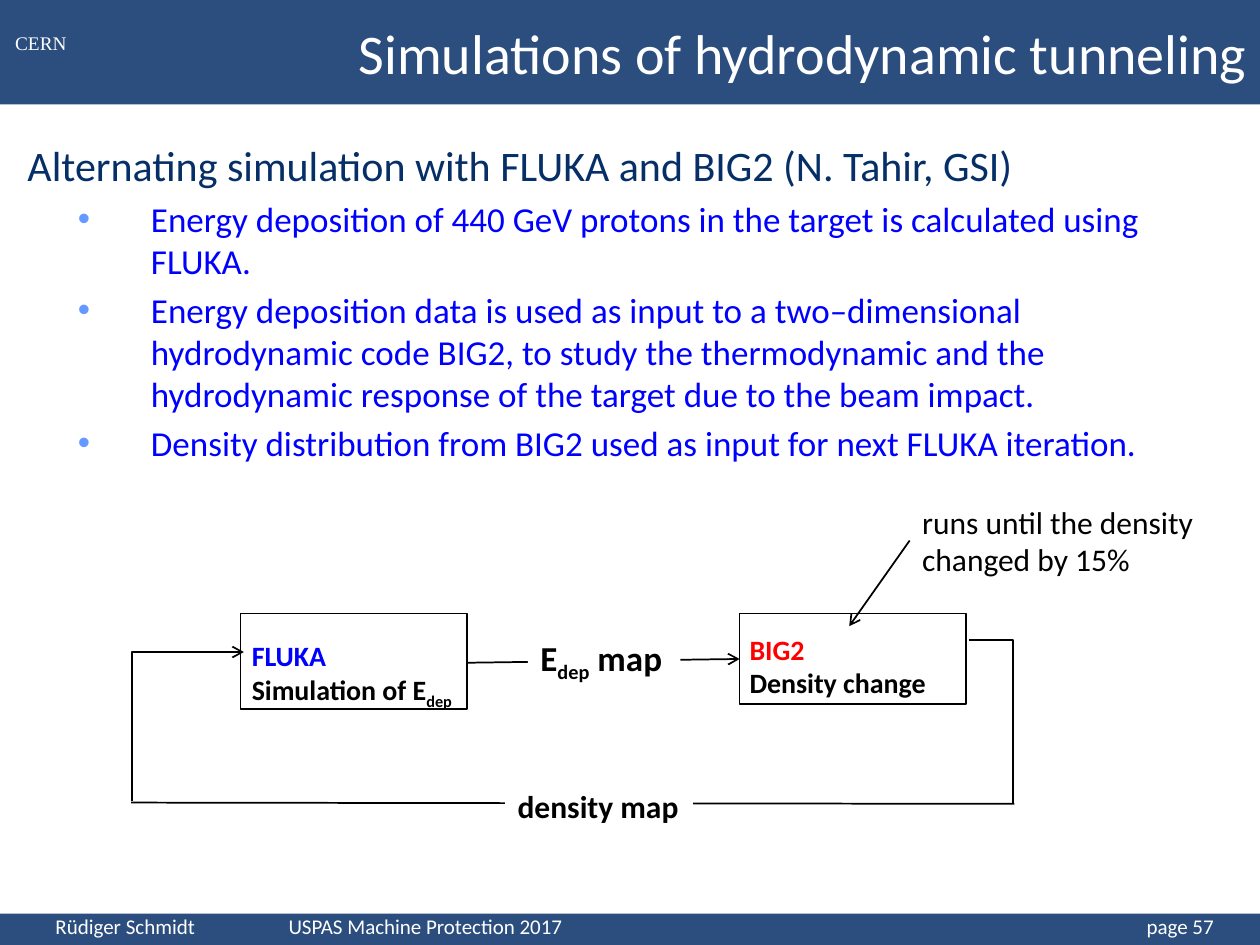
from lxml import etree
from pptx import Presentation
from pptx.dml.color import RGBColor
from pptx.enum import shapes, text
from pptx.oxml import ns
from pptx.util import Inches, Pt

NAVY, BAR, BLUE = "062F67", "2B4E7E", "0000FF"
BULLET, RED, BLACK, WHITE = "6699FF", "FF0000", "000000", "FFFFFF"
CALIBRI = "Calibri"


def color(value):
    return RGBColor.from_string(value)


def add_child(parent, tag, **attributes):
    return etree.SubElement(parent, ns.qn(tag), attributes)


def style_font(paragraph, size, value, bold=False, name=CALIBRI):
    font = paragraph.font
    font.name, font.size, font.bold = name, Pt(size), bold
    font.color.rgb = color(value)


def add_box(slide, left, top, width, height, fill=None, line=None):
    shape = slide.shapes.add_shape(
        shapes.MSO_SHAPE.RECTANGLE,
        Inches(left), Inches(top), Inches(width), Inches(height))
    shape.shadow.inherit = False
    if fill:
        shape.fill.solid()
        shape.fill.fore_color.rgb = color(fill)
    else:
        shape.fill.background()
    if line:
        shape.line.color.rgb = color(line)
        shape.line.width = Pt(1)
    else:
        shape.line.fill.background()
    return shape


def add_text(slide, left, top, width, height, lines, size, bold=False,
             wrap=True, fill=None, name=CALIBRI, align=text.PP_ALIGN.LEFT,
             anchor=text.MSO_ANCHOR.TOP, grow=False):
    box = slide.shapes.add_textbox(
        Inches(left), Inches(top), Inches(width), Inches(height))
    if fill:
        box.fill.solid()
        box.fill.fore_color.rgb = color(fill)
    frame = box.text_frame
    frame.word_wrap = wrap
    frame.vertical_anchor = anchor
    if grow:
        frame.auto_size = text.MSO_AUTO_SIZE.SHAPE_TO_FIT_TEXT
    for index, (parts, value) in enumerate(lines):
        paragraph = frame.add_paragraph() if index else frame.paragraphs[0]
        paragraph.alignment = align
        style_font(paragraph, size, value, bold, name)
        for position, part in enumerate(parts):
            run = paragraph.add_run()
            run.text = part
            if position == 1:
                run.font._element.set("baseline", "-25000")
    return box


def add_line(slide, start, end, arrow=False, kind=shapes.MSO_CONNECTOR.STRAIGHT):
    connector = slide.shapes.add_connector(
        kind, *(Inches(value) for value in (*start, *end)))
    connector.line.color.rgb = color(BLACK)
    connector.line.width = Pt(1)
    if arrow:
        add_child(connector.line._get_or_add_ln(), "a:tailEnd", type="arrow")
    add_child(connector._element.spPr, "a:effectLst")
    return connector


def add_corner(slide, start, end, rotation=0, arrow=False):
    connector = add_line(slide, start, end, arrow, shapes.MSO_CONNECTOR.ELBOW)
    properties = connector._element.spPr
    properties.find(ns.qn("a:prstGeom")).set("prst", "bentConnector2")
    properties.find(ns.qn("a:xfrm")).set("rot", str(rotation * 60000))


def add_header(slide, left, top, width, height):
    add_box(slide, left, top, width, height, BAR)
    add_text(slide, left - 0.01, top + 0.2, 0.67, 0.29, [(["CERN"], WHITE)], 11,
             name="Times New Roman", align=text.PP_ALIGN.CENTER)
    add_text(slide, left + height, top, width - height, height,
             [(["Simulations of hydrodynamic tunneling"], WHITE)], 32,
             align=text.PP_ALIGN.RIGHT, anchor=text.MSO_ANCHOR.MIDDLE)


def add_footer(slide, left, top, width, height):
    add_box(slide, left, top, width, height, BAR)
    box = slide.shapes.add_textbox(
        Inches(left), Inches(top), Inches(width), Inches(height))
    frame = box.text_frame
    frame.margin_left = Inches(0.44)
    frame.word_wrap = True
    frame.vertical_anchor = text.MSO_ANCHOR.BOTTOM
    paragraph = frame.paragraphs[0]
    tabs = add_child(paragraph._p.get_or_add_pPr(), "a:tabLst")
    for position in (1.85, 8.66):
        add_child(tabs, "a:tab", pos=str(Inches(position)), algn="l")
    style_font(paragraph, 12, WHITE)
    paragraph.add_run().text = (
        "Rüdiger Schmidt\tUSPAS Machine Protection 2017\tpage 57")


def add_body(slide, left, top, width, height, heading, bullets):
    box = add_text(slide, left, top, width, height, [([heading], NAVY)], 24,
                   fill=WHITE)
    for bullet in bullets:
        paragraph = box.text_frame.add_paragraph()
        paragraph.level = 1
        properties = paragraph._p.get_or_add_pPr()
        properties.set("marL", str(Inches(0.98)))
        properties.set("indent", str(Inches(-0.58)))
        add_child(add_child(properties, "a:buClr"), "a:srgbClr", val=BULLET)
        add_child(properties, "a:buFont", typeface="Arial")
        add_child(properties, "a:buChar", char="•")
        paragraph.space_before = Pt(4)
        style_font(paragraph, 20, BLUE)
        paragraph.add_run().text = bullet


def add_cycle(slide, left, top):
    def at(x, y):
        return left + x, top + y

    add_box(slide, *at(0.87, 0.93), 1.8, 0.76, line=BLACK)
    add_box(slide, *at(4.83, 0.93), 1.8, 0.72, line=BLACK)
    add_line(slide, at(2.67, 1.32), at(4.83, 1.29), arrow=True)
    add_corner(slide, at(6.65, 1.14), at(7, 2.44))
    add_line(slide, at(7.01, 2.44), at(0, 2.43))
    add_corner(slide, at(1.04, 2.27), at(-0.14, 1.38), 90, arrow=True)
    labels = [
        (0.86, 1.08, 2.02, 0.64, 16, True, True, None,
         [(["FLUKA"], BLUE), (["Simulation of E", "dep"], BLACK)]),
        (4.81, 1.03, 1.78, 0.64, 16, True, True, None,
         [(["BIG2"], RED), (["Density change"], BLACK)]),
        (3.15, 1.06, 1.21, 0.44, 20, True, False, WHITE,
         [(["E", "dep", " map"], BLACK)]),
        (6.18, 0, 2.44, 0.71, 18, False, False, None,
         [(["runs until the density"], BLACK), (["changed by 15%"], BLACK)]),
        (2.97, 2.26, 1.49, 0.4, 18, True, False, WHITE,
         [(["density map"], BLACK)]),
    ]
    for x, y, width, height, size, bold, wrap, fill, lines in labels:
        add_text(slide, *at(x, y), width, height, lines, size, bold, wrap, fill,
                 grow=True)
    add_line(slide, at(6.18, 0.35), at(5.7, 1.03), arrow=True)


def main():
    presentation = Presentation()
    presentation.slide_width = Inches(10)
    presentation.slide_height = Inches(7.5)
    slide = presentation.slides.add_slide(presentation.slide_layouts[6])
    add_header(slide, 0, 0, 10, 0.83)
    add_footer(slide, 0, 7.25, 10, 0.25)
    add_body(
        slide, 0.12, 1.06, 9.67, 3.13,
        "Alternating simulation with FLUKA and BIG2 (N. Tahir, GSI)",
        ["Energy deposition of 440 GeV protons in the target is calculated "
         "using FLUKA.",
         "Energy deposition data is used as input to a two–dimensional "
         "hydrodynamic code BIG2, to study the thermodynamic and the "
         "hydrodynamic response of the target due to the beam impact.",
         "Density distribution from BIG2 used as input for next FLUKA "
         "iteration."])
    add_cycle(slide, 1.04, 3.94)
    presentation.save("out.pptx")


if __name__ == "__main__":
    main()
